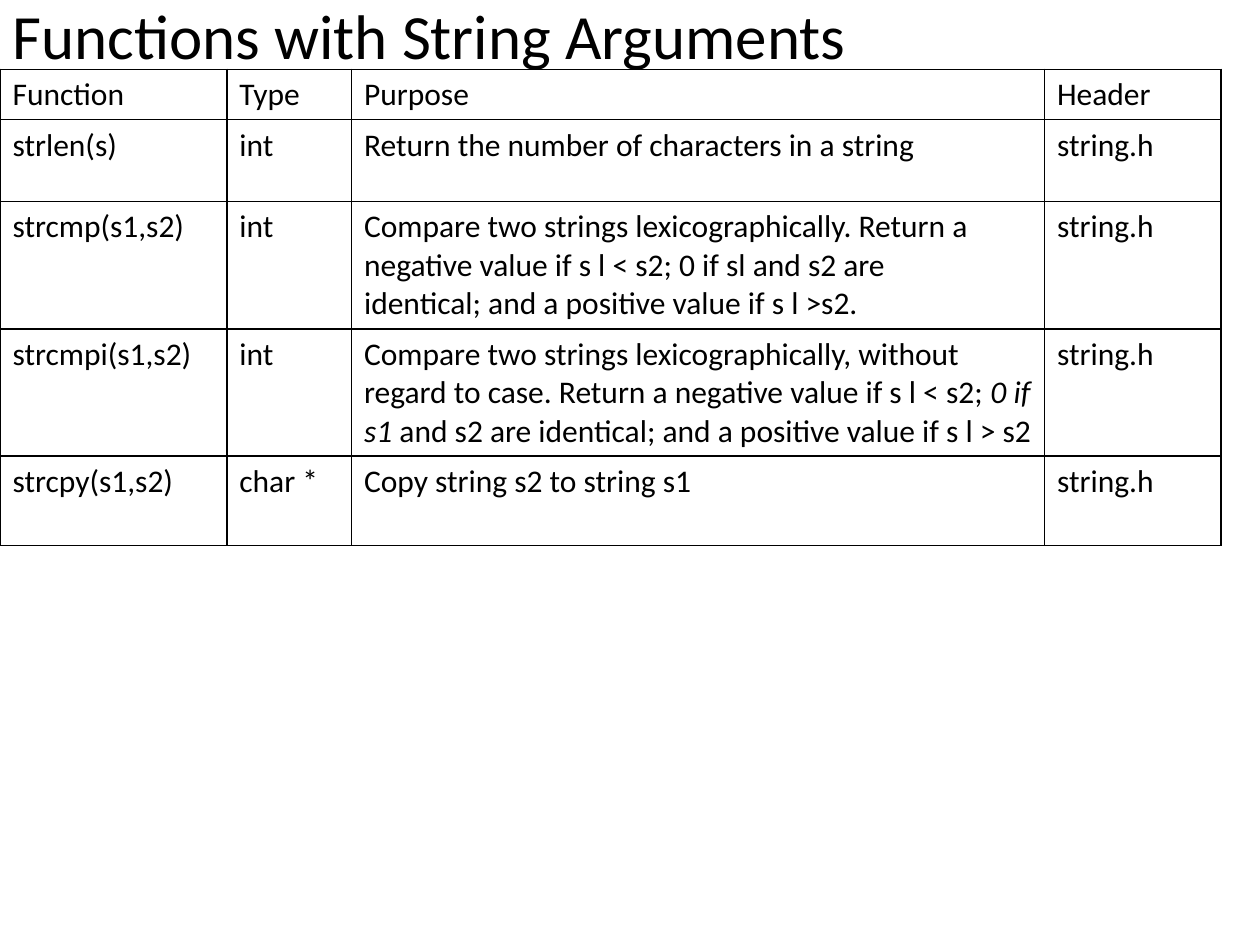
"""Build a slide with a table of C string functions."""
from lxml.etree import SubElement
from pptx import Presentation
from pptx.dml.color import RGBColor
from pptx.enum.text import MSO_ANCHOR
from pptx.oxml.ns import qn
from pptx.util import Inches, Pt

COLORS = {"text": "000000", "border": "000000", "background": "FFFFFF"}
FONT = "Calibri"
COLUMN_WIDTHS = [1.8, 0.99, 5.5, 1.4]
ROW_HEIGHTS = [0.4, 0.65, 1.01, 1.01, 0.71]
COMPARE = [
    [("Compare two strings lexicographically. Return a", False)],
    [("negative value if s l < s2; 0 if sl and s2 are", False)],
    [("identical; and a positive value if s l >s2.", False)],
]
COMPARE_IGNORING_CASE = [[
    ("Compare two strings lexicographically, without regard to case. "
     "Return a negative value if s l < s2; ", False),
    ("0 if s1 ", True),
    ("and s2 are identical; and a positive value if s l > s2", False),
]]
ROWS = [
    ["Function", "Type", "Purpose", "Header"],
    ["strlen(s)", "int", "Return the number of characters in a string", "string.h"],
    ["strcmp(s1,s2)", "int", COMPARE, "string.h"],
    ["strcmpi(s1,s2)", "int", COMPARE_IGNORING_CASE, "string.h"],
    ["strcpy(s1,s2)", "char *", "Copy string s2 to string s1", "string.h"],
]


def write_text(frame, content, size):
    paragraphs = [[(content, False)]] if isinstance(content, str) else content
    for index, spans in enumerate(paragraphs):
        para = frame.paragraphs[0] if index == 0 else frame.add_paragraph()
        for text, italic in spans:
            span = para.add_run()
            span.text = text
            span.font.name = FONT
            span.font.size = Pt(size)
            span.font.bold = False
            span.font.italic = italic
            span.font.color.rgb = RGBColor.from_string(COLORS["text"])


def add_borders(cell):
    properties = cell._tc.get_or_add_tcPr()
    for position, side in enumerate(("a:lnL", "a:lnR", "a:lnT", "a:lnB")):
        line = properties.makeelement(qn(side), {"w": str(Pt(1))})
        fill = SubElement(line, qn("a:solidFill"))
        SubElement(fill, qn("a:srgbClr"), val=COLORS["border"])
        properties.insert(position, line)


deck = Presentation()
deck.slide_width = Inches(10)
deck.slide_height = Inches(7.5)
page = deck.slides.add_slide(deck.slide_layouts[6])
page.background.fill.solid()
page.background.fill.fore_color.rgb = RGBColor.from_string(COLORS["background"])

title_box = page.shapes.add_textbox(Inches(0), Inches(0), Inches(9), Inches(0.55))
title_box.text_frame.word_wrap = True
title_box.text_frame.vertical_anchor = MSO_ANCHOR.MIDDLE
write_text(title_box.text_frame, "Functions with String Arguments", 36)

table = page.shapes.add_table(
    len(ROWS), len(COLUMN_WIDTHS), Inches(0), Inches(0.55),
    Inches(sum(COLUMN_WIDTHS)), Inches(sum(ROW_HEIGHTS))).table
table.first_row = False
table.horz_banding = False
for column, width in zip(table.columns, COLUMN_WIDTHS):
    column.width = Inches(width)
for row, height, contents in zip(table.rows, ROW_HEIGHTS, ROWS):
    row.height = Inches(height)
    for cell, content in zip(row.cells, contents):
        cell.fill.background()
        add_borders(cell)
        write_text(cell.text_frame, content, 18)

deck.save("out.pptx")
